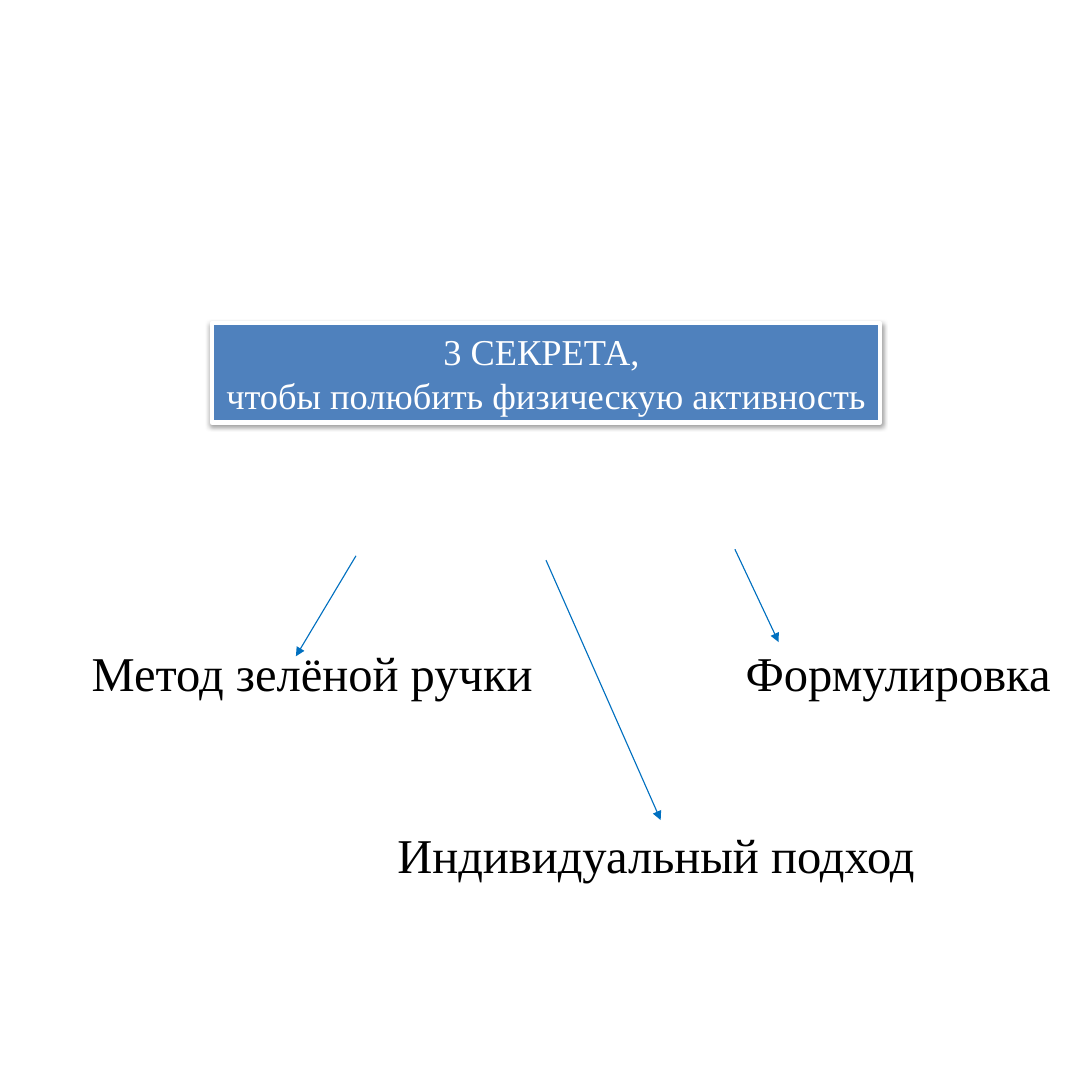
from lxml import etree
from pptx import Presentation
from pptx.dml.color import RGBColor
from pptx.enum.shapes import MSO_CONNECTOR as LINK
from pptx.enum.text import MSO_AUTO_SIZE as FIT, MSO_ANCHOR as ANCHOR, PP_ALIGN as ALIGN
from pptx.oxml import parse_xml
from pptx.oxml.ns import qn
from pptx.util import Inches, Pt

WHITE = RGBColor(0xFF, 0xFF, 0xFF)
BLACK = RGBColor(0x00, 0x00, 0x00)
BLUE = RGBColor(0x4F, 0x81, 0xBD)
ARROW = RGBColor(0x00, 0x70, 0xC0)

FACE = "Times New Roman"
HEAD = {"name": FACE, "size": Pt(24), "bold": False}
LABEL = {"name": FACE, "size": Pt(32)}
FRAME = {"word_wrap": False, "auto_size": FIT.SHAPE_TO_FIT_TEXT}

SHADOW = (
    '<a:effectLst xmlns:a="http://schemas.openxmlformats.org/drawingml/2006/main">'
    '<a:outerShdw blurRad="39370" dist="20320" dir="5400000" rotWithShape="0">'
    '<a:srgbClr val="000000"><a:alpha val="38000"/></a:srgbClr>'
    '</a:outerShdw></a:effectLst>'
)

# Label, its place and width, then arrow start and end, in inches within the box
SECRETS = [
    ("Метод зелёной ручки", (0, 0.81, 4.31), (2.52, 0.06), (1.97, 0.98)),
    ("Индивидуальный подход", (2.8, 2.48, 5.03), (4.26, 0.1), (5.31, 2.48)),
    ("Формулировка", (5.99, 0.81, 3.17), (5.99, 0), (6.39, 0.85)),
]


def set_all(item, values):
    for key, value in values.items():
        setattr(item, key, value)


def write(shape, lines, form, color, align):
    frame = shape.text_frame
    frame.text = "\n".join(lines)
    set_all(frame, FRAME)
    for para in frame.paragraphs:
        para.alignment = align
        set_all(para.runs[0].font, form)
        para.runs[0].font.color.rgb = color


def add_head(slide, left, top, width, height):
    title = slide.shapes.title
    set_all(title, {"left": Inches(left), "top": Inches(top),
                    "width": Inches(width), "height": Inches(height)})
    title.fill.solid()
    title.fill.fore_color.rgb = BLUE
    title.line.color.rgb = WHITE
    title.line.width = Pt(3)
    title.element.spPr.append(parse_xml(SHADOW))
    lines = ["3 СЕКРЕТА, ", "чтобы полюбить физическую активность"]
    write(title, lines, HEAD, WHITE, ALIGN.CENTER)
    title.text_frame.vertical_anchor = ANCHOR.MIDDLE


def add_arrow(slide, start, end):
    arrow = slide.shapes.add_connector(LINK.STRAIGHT, *map(Inches, start + end))
    arrow.line.color.rgb = ARROW
    arrow.line.width = Pt(0.75)
    etree.SubElement(arrow.line._get_or_add_ln(), qn("a:tailEnd"), type="triangle")
    etree.SubElement(arrow.element.spPr, qn("a:effectLst"))


def add_secrets(slide, left, top):
    def shift(point):
        return left + point[0], top + point[1]

    # Labels
    for text, (x, y, width), _, _ in SECRETS:
        area = (*shift((x, y)), width, 0.64)
        label = slide.shapes.add_textbox(*map(Inches, area))
        write(label, [text], LABEL, BLACK, ALIGN.LEFT)

    # Arrows
    for _, _, start, end in SECRETS:
        add_arrow(slide, shift(start), shift(end))


def main():
    deck = Presentation()
    deck.slide_width = deck.slide_height = Inches(10)
    slide = deck.slides.add_slide(deck.slide_layouts[5])
    add_head(slide, 1.94, 2.96, 6.12, 0.91)
    add_secrets(slide, 0.74, 5.03)
    deck.save("out.pptx")


if __name__ == "__main__":
    main()
